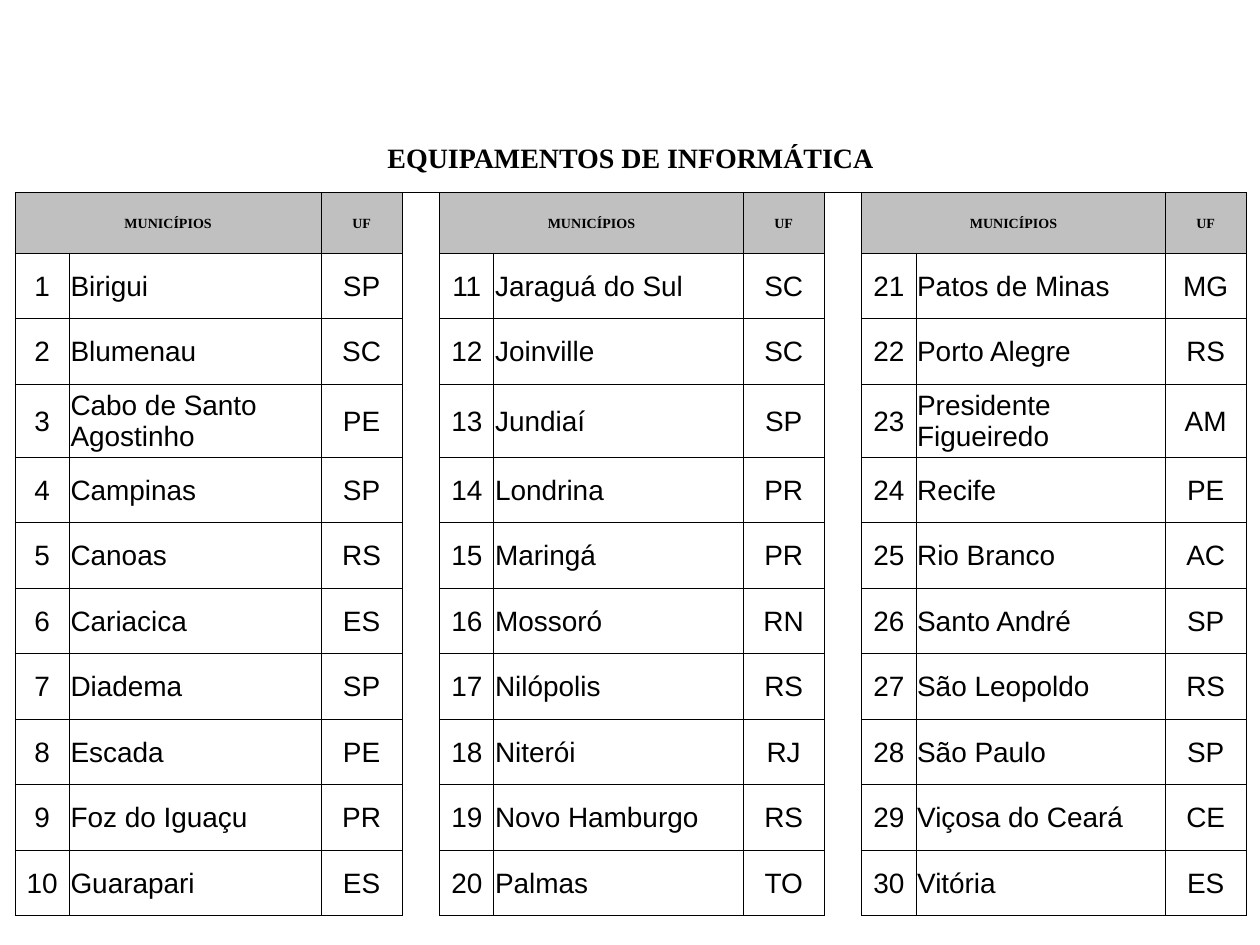
from dataclasses import dataclass
from typing import NamedTuple

from lxml.etree import SubElement
from pptx import Presentation
from pptx.dml.color import RGBColor
from pptx.enum.text import MSO_ANCHOR as Anchor, PP_ALIGN as Align
from pptx.oxml.ns import qn
from pptx.util import Inches, Pt


@dataclass(frozen=True)
class Theme:
    ink: str = "000000"
    header_fill: str = "C0C0C0"
    heading_font: str = "Times New Roman"
    body_font: str = "Arial"
    title_size: float = 16
    header_size: float = 8
    body_size: float = 16
    border_width: float = 0.5
    plain_style: str = "{2D5ABB26-0587-4C30-8999-92F81FD0307C}"


class TextStyle(NamedTuple):
    font: str
    size: float
    bold: bool


class City(NamedTuple):
    name: str
    state: str


THEME = Theme()
TITLE = TextStyle(THEME.heading_font, THEME.title_size, True)
HEADER = TextStyle(THEME.heading_font, THEME.header_size, True)
BODY = TextStyle(THEME.body_font, THEME.body_size, False)

CITIES = [
    City("Birigui", "SP"), City("Blumenau", "SC"), City("Cabo de Santo Agostinho", "PE"),
    City("Campinas", "SP"), City("Canoas", "RS"), City("Cariacica", "ES"),
    City("Diadema", "SP"), City("Escada", "PE"), City("Foz do Iguaçu", "PR"),
    City("Guarapari", "ES"), City("Jaraguá do Sul", "SC"), City("Joinville", "SC"),
    City("Jundiaí", "SP"), City("Londrina", "PR"), City("Maringá", "PR"),
    City("Mossoró", "RN"), City("Nilópolis", "RS"), City("Niterói", "RJ"),
    City("Novo Hamburgo", "RS"), City("Palmas", "TO"), City("Patos de Minas", "MG"),
    City("Porto Alegre", "RS"), City("Presidente Figueiredo", "AM"), City("Recife", "PE"),
    City("Rio Branco", "AC"), City("Santo André", "SP"), City("São Leopoldo", "RS"),
    City("São Paulo", "SP"), City("Viçosa do Ceará", "CE"), City("Vitória", "ES"),
]
CITIES_PER_GROUP = 10
GROUP_STRIDE = 4
FIRST_CITY_ROW = 2
COLUMN_WIDTHS = [0.43, 2, 0.64, 0.3, 0.43, 1.98, 0.64, 0.3, 0.43, 1.98, 0.64]
ROW_HEIGHTS = [0.54, 0.48, 0.52, 0.52, 0.58] + [0.52] * 7


def draw_borders(cell, sides: str) -> None:
    properties = cell._tc.get_or_add_tcPr()
    for side in sides:
        line = SubElement(properties, qn(f"a:ln{side}"), w=str(Pt(THEME.border_width)))
        fill = SubElement(line, qn("a:solidFill"))
        SubElement(fill, qn("a:srgbClr"), val=THEME.ink)


def write_cell(cell, text: str, style: TextStyle, align: Align = Align.CENTER) -> None:
    cell.vertical_anchor = Anchor.MIDDLE
    cell.margin_left = cell.margin_right = cell.margin_top = Inches(0.01)
    cell.margin_bottom = 0
    para = cell.text_frame.paragraphs[0]
    para.alignment = align
    span = para.add_run()
    span.text = text
    span.font.name = style.font
    span.font.size = Pt(style.size)
    span.font.bold = style.bold
    span.font.color.rgb = RGBColor.from_string(THEME.ink)


def fill_header(table, first_column: int) -> None:
    number, name, state = (table.cell(1, first_column + offset) for offset in range(3))
    number.merge(name)
    for cell in (number, name, state):
        cell.fill.solid()
        cell.fill.fore_color.rgb = RGBColor.from_string(THEME.header_fill)
    write_cell(number, "MUNICÍPIOS", HEADER)
    write_cell(state, "UF", HEADER)


def fill_city(table, index: int, city: City) -> None:
    group, position = divmod(index, CITIES_PER_GROUP)
    row, column = FIRST_CITY_ROW + position, group * GROUP_STRIDE
    write_cell(table.cell(row, column), str(index + 1), BODY)
    write_cell(table.cell(row, column + 1), city.name, BODY, Align.LEFT)
    write_cell(table.cell(row, column + 2), city.state, BODY)


def add_city_table(page) -> None:
    frame = page.shapes.add_table(
        len(ROW_HEIGHTS), len(COLUMN_WIDTHS), Inches(0.12), Inches(0.99),
        Inches(sum(COLUMN_WIDTHS)), Inches(sum(ROW_HEIGHTS)))
    table = frame.table
    table.first_row = table.horz_banding = False
    table._tbl.tblPr.find(qn("a:tableStyleId")).text = THEME.plain_style
    for column, width in zip(table.columns, COLUMN_WIDTHS):
        column.width = Inches(width)
    for row, height in zip(table.rows, ROW_HEIGHTS):
        row.height = Inches(height)

    for row in range(1, len(ROW_HEIGHTS)):
        for column in range(len(COLUMN_WIDTHS)):
            is_gutter = column % GROUP_STRIDE == GROUP_STRIDE - 1
            draw_borders(table.cell(row, column), "LR" if is_gutter else "LRTB")

    title = table.cell(0, 0)
    title.merge(table.cell(0, len(COLUMN_WIDTHS) - 1))
    write_cell(title, "EQUIPAMENTOS DE INFORMÁTICA", TITLE)
    for first_column in range(0, len(COLUMN_WIDTHS), GROUP_STRIDE):
        fill_header(table, first_column)
    for index, city in enumerate(CITIES):
        fill_city(table, index, city)


def main() -> None:
    deck = Presentation()
    deck.slide_width, deck.slide_height = Inches(10), Inches(7.5)
    page = deck.slides.add_slide(deck.slide_layouts[6])
    add_city_table(page)
    deck.save("out.pptx")


if __name__ == "__main__":
    main()
